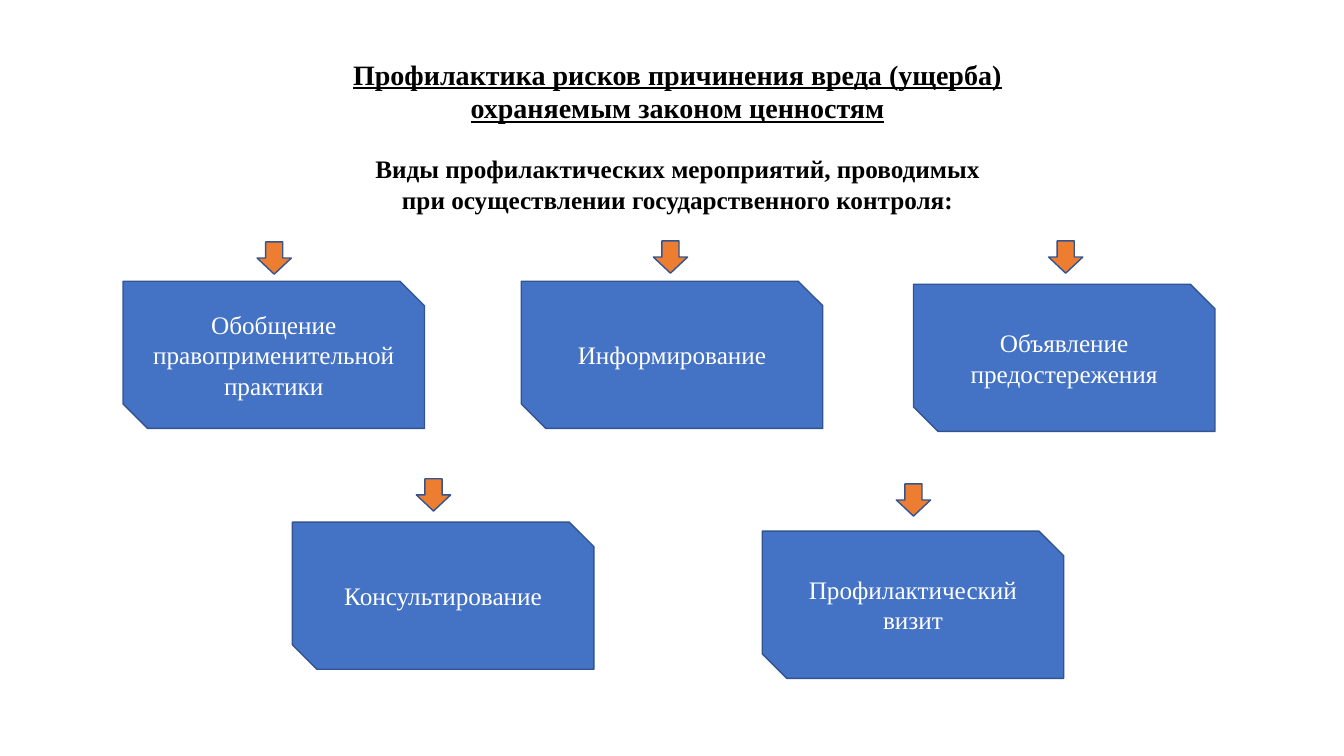
from pptx import Presentation
from pptx.dml.color import RGBColor
from pptx.enum.shapes import MSO_SHAPE
from pptx.enum.text import MSO_ANCHOR, MSO_AUTO_SIZE, PP_ALIGN
from pptx.util import Inches, Pt

COLORS = {"text": "000000", "card": "4472C4", "card_text": "FFFFFF",
          "arrow": "ED7D31", "outline": "325491"}
FONT = "Times New Roman"
CARD_W, CARD_H = 2.99, 1.46
ARROW_W, ARROW_H = 0.34, 0.32

# Card text, card left and top, arrow left and top
MEASURES = [
    ("Обобщение правоприменительной практики", 1.22, 2.79, 2.55, 2.4),
    ("Информирование", 5.17, 2.79, 6.48, 2.39),
    ("Объявление предостережения", 9.06, 2.82, 10.4, 2.39),
    ("Консультирование", 2.9, 5.18, 4.13, 4.75),
    ("Профилактический визит", 7.56, 5.27, 8.89, 4.8),
]


class SlideBuilder:
    def __init__(self, slide):
        self.slide = slide

    def set_text(self, sp, lines, size, color, bold=False, underline=False):
        """Fill a shape with centred paragraphs, one per line."""
        tf = sp.text_frame
        tf.text = "\n".join(lines)
        tf.word_wrap = True
        tf.auto_size = MSO_AUTO_SIZE.NONE
        tf.vertical_anchor = MSO_ANCHOR.MIDDLE
        for p in tf.paragraphs:
            p.alignment = PP_ALIGN.CENTER
            p.line_spacing = 1.0
            p.space_before = Pt(0)
            for r in p.runs:
                r.font.name = FONT
                r.font.size = Pt(size)
                r.font.bold = bold
                r.font.underline = underline
                r.font.color.rgb = RGBColor.from_string(COLORS[color])

    def heading(self, sp, lines, top, height, size, underline=False):
        sp.left, sp.top = Inches(0.5), Inches(top)
        sp.width, sp.height = Inches(12.44), Inches(height)
        self.set_text(sp, lines, size, "text", bold=True, underline=underline)

    def shape(self, kind, left, top, width, height, fill):
        sp = self.slide.shapes.add_shape(
            kind, Inches(left), Inches(top), Inches(width), Inches(height))
        sp.shadow.inherit = False
        sp.fill.solid()
        sp.fill.fore_color.rgb = RGBColor.from_string(COLORS[fill])
        sp.line.color.rgb = RGBColor.from_string(COLORS["outline"])
        sp.line.width = Pt(1)
        return sp

    def card(self, text, left, top):
        sp = self.shape(MSO_SHAPE.SNIP_2_DIAG_RECTANGLE, left, top,
                        CARD_W, CARD_H, "card")
        self.set_text(sp, [text], 18, "card_text")

    def arrow(self, left, top):
        self.shape(MSO_SHAPE.DOWN_ARROW, left, top, ARROW_W, ARROW_H, "arrow")


def main():
    prs = Presentation()
    prs.slide_width, prs.slide_height = Inches(13.33), Inches(7.5)
    s = prs.slides.add_slide(prs.slide_layouts[0])
    builder = SlideBuilder(s)

    builder.heading(s.shapes.title,
                    ["Профилактика рисков причинения вреда (ущерба)",
                     "охраняемым законом ценностям"],
                    0.5, 0.8, 20, underline=True)
    builder.heading(s.placeholders[1],
                    ["Виды профилактических мероприятий, проводимых",
                     "при осуществлении государственного контроля:"],
                    1.45, 0.75, 18)

    for text, left, top, arrow_left, arrow_top in MEASURES:
        builder.card(text, left, top)
        builder.arrow(arrow_left, arrow_top)

    prs.save("out.pptx")


if __name__ == "__main__":
    main()
